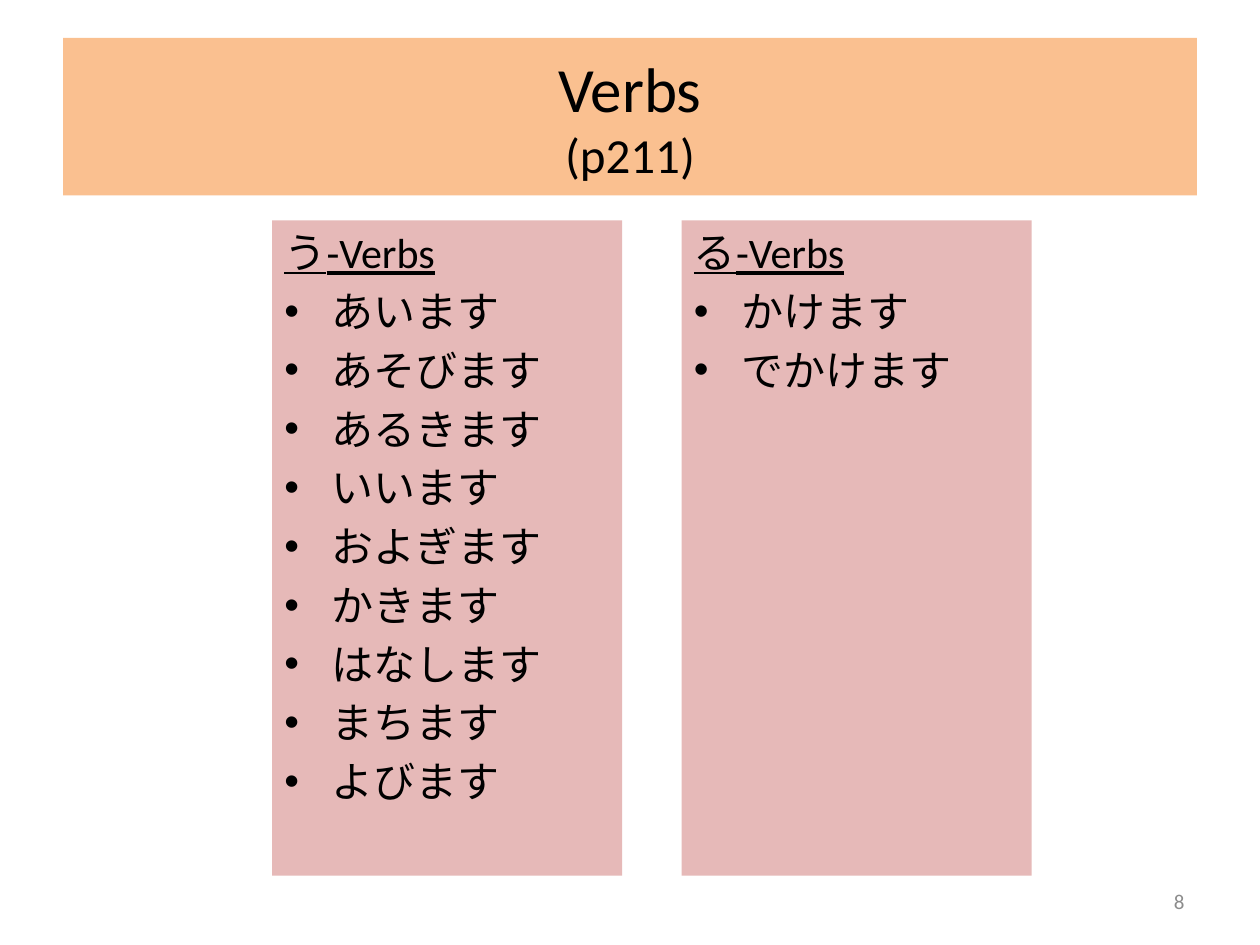
from dataclasses import dataclass

from lxml import etree
from pptx import Presentation
from pptx import util as u
from pptx.dml import color
from pptx.enum import shapes, text
from pptx.oxml import ns


@dataclass(frozen=True)
class Theme:
    band: str = "FAC090"
    panel: str = "E6B9B8"
    ink: str = "000000"
    gray: str = "8C8C8C"
    latin: str = "Calibri"
    kana: str = "Roboto"
    head: int = 36
    sub: int = 28
    body: int = 24
    note: int = 12
    hang: int = 27


def apply(item, props):
    for name, value in props.items():
        setattr(item, name, value)


class Deck:
    def __init__(self, theme):
        self.theme = theme
        self.prs = Presentation()
        apply(self.prs, {"slide_width": u.Pt(720), "slide_height": u.Pt(540)})
        self.slide = self.prs.slides.add_slide(self.prs.slide_layouts[5])

    def fill(self, shape, tone):
        shape.fill.solid()
        shape.fill.fore_color.rgb = color.RGBColor.from_string(tone)

    def frame(self, shape, anchor):
        frame = shape.text_frame
        apply(frame, {"word_wrap": True, "vertical_anchor": anchor,
                      "auto_size": text.MSO_AUTO_SIZE.NONE})
        return frame

    def run(self, para, words, size, face, tone, line=False):
        run = para.add_run()
        run.text = words
        apply(run.font, {"size": u.Pt(size), "name": face, "underline": line})
        run.font.color.rgb = color.RGBColor.from_string(tone)
        # East Asian letters take their own typeface entry
        east = etree.SubElement(run.font._element, ns.qn("a:ea"))
        east.set("typeface", face)

    def title(self, box, main, sub):
        t, shape = self.theme, self.slide.shapes.title
        apply(shape, dict(zip(("left", "top", "width", "height"), map(u.Pt, box))))
        self.fill(shape, t.band)
        para = self.frame(shape, text.MSO_ANCHOR.MIDDLE).paragraphs[0]
        para.alignment = text.PP_ALIGN.CENTER
        self.run(para, main, t.head, t.latin, t.ink)
        para.add_line_break()
        self.run(para, sub, t.sub, t.latin, t.ink)

    def hang(self, para, mark):
        apply(para, {"alignment": text.PP_ALIGN.LEFT})
        props = para._p.get_or_add_pPr()
        props.set("marL", str(u.Pt(self.theme.hang)))
        props.set("indent", str(-u.Pt(self.theme.hang)))
        gap = etree.SubElement(props, ns.qn("a:spcBef"))
        etree.SubElement(gap, ns.qn("a:spcPct")).set("val", "20000")
        if mark:
            etree.SubElement(props, ns.qn("a:buFont")).set("typeface", "Arial")
            etree.SubElement(props, ns.qn("a:buChar")).set("char", mark)
        else:
            etree.SubElement(props, ns.qn("a:buNone"))

    def panel(self, box, kana, verbs):
        t = self.theme
        shape = self.slide.shapes.add_shape(
            shapes.MSO_SHAPE.RECTANGLE, *map(u.Pt, box))
        shape.shadow.inherit = False
        shape.line.fill.background()
        self.fill(shape, t.panel)
        frame = self.frame(shape, text.MSO_ANCHOR.TOP)
        # Underlined heading
        para = frame.paragraphs[0]
        self.hang(para, None)
        self.run(para, kana, t.body, t.kana, t.ink, True)
        self.run(para, "-Verbs", t.body, t.latin, t.ink, True)
        # Bulleted verbs
        for verb in verbs:
            para = frame.add_paragraph()
            self.hang(para, "•")
            self.run(para, verb, t.body, t.kana, t.ink)

    def number(self, box, words):
        t = self.theme
        shape = self.slide.shapes.add_textbox(*map(u.Pt, box))
        para = self.frame(shape, text.MSO_ANCHOR.MIDDLE).paragraphs[0]
        para.alignment = text.PP_ALIGN.RIGHT
        self.run(para, words, t.note, t.latin, t.gray)


VERBS = {
    "う": ["あいます", "あそびます", "あるきます", "いいます", "およぎます",
          "かきます", "はなします", "まちます", "よびます"],
    "る": ["かけます", "でかけます"],
}


def main():
    deck = Deck(Theme())
    # Title band
    deck.title((36, 21.6, 648, 90), "Verbs", "(p211)")
    # One panel per verb group
    left, step = 155.5, 234
    for col, (kana, verbs) in enumerate(VERBS.items()):
        deck.panel((left + col * step, 126, 200, 374.4), kana, verbs)
    # Slide number
    deck.number((516, 500.5, 168, 28.8), "8")
    deck.prs.save("out.pptx")


if __name__ == "__main__":
    main()
